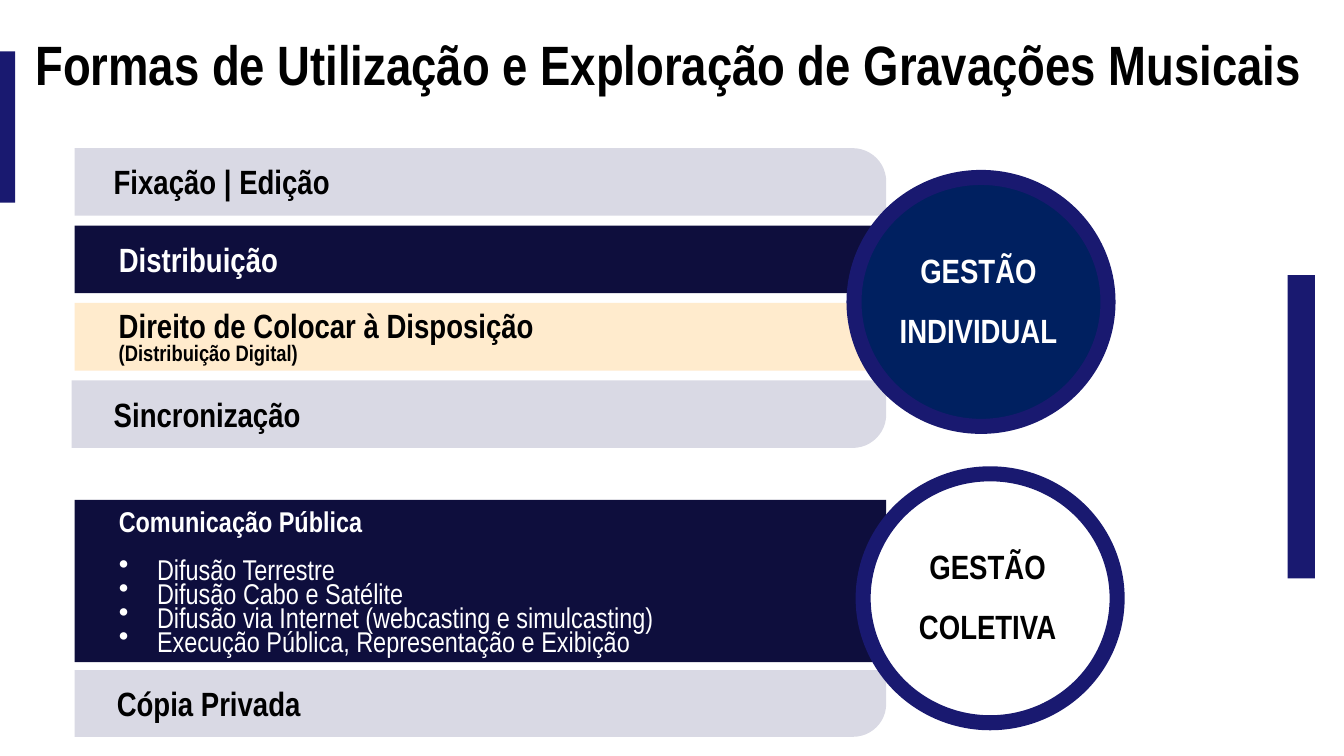
from lxml.etree import SubElement
from pptx import Presentation
from pptx.dml.color import RGBColor as RGB
from pptx.enum.shapes import MSO_SHAPE as Kind
from pptx.enum.text import MSO_ANCHOR as Anchor, PP_ALIGN as Align
from pptx.oxml.ns import qn
from pptx.util import Inches, Pt

WIDE, HIGH = Inches(13.33), Inches(7.5)
PAGE = (0, 0, WIDE, HIGH)
BLACK, WHITE = RGB(0, 0, 0), RGB(255, 255, 255)
GREY, CREAM = RGB(0xD9, 0xD9, 0xE4), RGB(0xFF, 0xEB, 0xCD)
NIGHT, NAVY, BLUE = RGB(0x0E, 0x0E, 0x3D), RGB(0, 0x20, 0x60), RGB(0x19, 0x19, 0x70)
FACE = {"name": "Arial Narrow", "bold": True}
HEAD = {**FACE, "size": Pt(39.6)}
BIG = {**FACE, "size": Pt(24)}
SMALL = {**FACE, "size": Pt(16)}
LIST = {**FACE, "size": Pt(20.4)}
ITEM = {**LIST, "bold": False}


def part(box, x, y, w, h):
    """Return the area at the given percentages of a box."""
    left, top, wide, high = box
    return (int(left + wide * x / 100), int(top + high * y / 100),
            int(wide * w / 100), int(high * h / 100))


def style(para, look, color, **form):
    """Format a paragraph and its text."""
    font = para.runs[0].font
    for key, val in form.items():
        setattr(para, key, val)
    for key, val in look.items():
        setattr(font, key, val)
    font.color.rgb = color


def block(slide, kind, box, fill):
    """Add a plain filled shape."""
    shape = slide.shapes.add_shape(kind, *box)
    shape.shadow.inherit = False
    shape.fill.solid()
    shape.fill.fore_color.rgb = fill
    shape.line.fill.background()
    return shape


def label(slide, box, lines, color, **form):
    """Add a middle-anchored text box and return its paragraphs."""
    frame = slide.shapes.add_textbox(*box).text_frame
    frame.word_wrap = True
    frame.vertical_anchor = Anchor.MIDDLE
    frame.text = "\n".join(text for text, _ in lines)
    for para, (_, look) in zip(frame.paragraphs, lines):
        style(para, look, color, **form)
    return frame.paragraphs


def bar(slide, box, fill, color, lines, inner, space=0.9, turn=None):
    """Draw a bar with its label, with one round corner if turn is given."""
    kind = Kind.RECTANGLE if turn is None else Kind.ROUND_1_RECTANGLE
    shape = block(slide, kind, box, fill)
    if turn is not None:
        shape.adjustments[0] = 0.497
    if turn:
        shape._element.spPr.xfrm.set("flipV", "1")
    return label(slide, part(box, *inner), lines, color, line_spacing=space)


def dot(para):
    """Give a paragraph a white bullet and a hanging indent."""
    props = para._p.get_or_add_pPr()
    props.set("marL", str(Inches(0.38)))
    props.set("indent", str(-Inches(0.38)))
    tint = SubElement(props, qn("a:buClr"))
    SubElement(tint, qn("a:srgbClr")).set("val", str(WHITE))
    SubElement(props, qn("a:buChar")).set("char", "•")


def title(slide, box):
    """Place and format the title."""
    head = slide.shapes.title
    for key, val in zip(("left", "top", "width", "height"), box):
        setattr(head, key, val)
    frame = head.text_frame
    frame.text = "Formas de Utilização e Exploração de Gravações Musicais"
    frame.vertical_anchor = Anchor.MIDDLE
    style(frame.paragraphs[0], HEAD, BLACK, line_spacing=0.9, alignment=Align.LEFT)


def solo(slide, box):
    """Stack the four bars of individual rights."""
    rows = [
        (GREY, BLACK, [("Fixação | Edição", BIG)], (3.6, 6, 51.43, 94), 0.9, False),
        (NIGHT, WHITE, [("Distribuição", BIG)], (4.22, 6, 32.42, 94), 0.9, None),
        (CREAM, BLACK, [("Direito de Colocar à Disposição", BIG),
                        ("(Distribuição Digital)", SMALL)],
         (4.22, 4.48, 81.99, 98.5), 0.8, None),
        (GREY, BLACK, [("Sincronização", BIG)], (3.96, 6, 44.84, 94), 0.9, True),
    ]
    for num, row in enumerate(rows):
        out = 0.37 if num == len(rows) - 1 else 0
        bar(slide, part(box, -out, num * 25.8, 100 + out, 22.5), *row)


def joint(slide, box):
    """Stack the two bars of collective rights."""
    uses = ["Difusão Terrestre", "Difusão Cabo e Satélite",
            "Difusão via Internet (webcasting e simulcasting)",
            "Execução Pública, Representação e Exibição"]
    lines = [("Comunicação Pública", LIST)] + [(use, ITEM) for use in uses]
    paras = bar(slide, part(box, 0, 0, 100, 68.51), NIGHT, WHITE, lines,
                (4.22, 2.5, 72.17, 100), 0.7)
    for para in paras[1:]:
        dot(para)
    paras[1].space_before = Pt(17.1)
    bar(slide, part(box, 0, 71.91, 100, 28.09), GREY, BLACK,
        [("Cópia Privada", BIG)], (3.98, 6, 44.84, 94), 0.9, True)


def ring(slide, box, text, fill, color):
    """Draw a ringed circle with its caption."""
    disc = block(slide, Kind.OVAL, box, fill)
    disc.line.color.rgb = BLUE
    disc.line.width = Pt(10.75)
    label(slide, part(box, 8.73, 17.4, 80.56, 55.47), [(text, BIG)], color,
          line_spacing=1.5, alignment=Align.CENTER)


def main():
    """Build and save the slide."""
    deck = Presentation()
    deck.slide_width, deck.slide_height = WIDE, HIGH
    slide = deck.slides.add_slide(deck.slide_layouts[5])
    title(slide, part(PAGE, 1.88, 1.2, 96.85, 15.47))
    for spot in ((0, 6.8, 1.13, 20), (95.8, 36.4, 2.03, 40.1)):
        block(slide, Kind.RECTANGLE, part(PAGE, *spot), BLUE)
    solo(slide, part(PAGE, 5.55, 19.6, 60.39, 39.7))
    joint(slide, part(PAGE, 5.55, 66.13, 60.39, 31.33))
    ring(slide, part(PAGE, 63.54, 23.47, 18.9, 32.93),
         "GESTÃO INDIVIDUAL", NAVY, WHITE)
    ring(slide, part(PAGE, 64.22, 62.67, 18.9, 32.93),
         "GESTÃO COLETIVA", WHITE, BLACK)
    deck.save("out.pptx")


if __name__ == "__main__":
    main()
